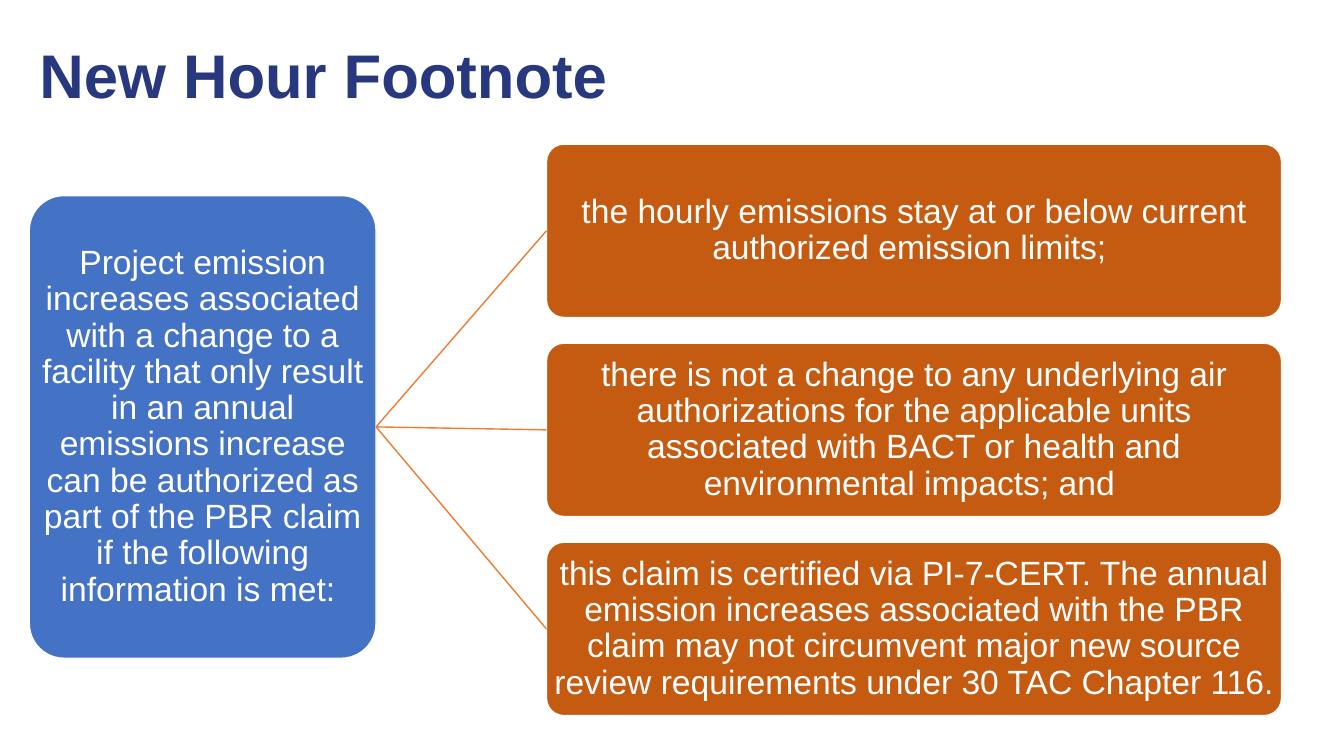
import pptx
import pptx.util
from pptx.dml.color import RGBColor
from pptx.enum.shapes import MSO_CONNECTOR, MSO_SHAPE
from pptx.enum.text import MSO_ANCHOR, MSO_AUTO_SIZE, PP_ALIGN
from pptx.oxml.ns import qn
from lxml import etree

WIDTH, HEIGHT = pptx.util.Inches(13.33), pptx.util.Inches(7.5)
LEFT = 2.18  # left margin, percent of the slide width
CONDITION_TOP, CONDITION_PITCH = 19.07, 26.33  # percent of the slide height

CLAIM = ("Project emission increases associated with a change to a facility that "
         "only result in an annual emissions increase can be authorized as part of "
         "the PBR claim if the following information is met: ")
CONDITIONS = [
    "the hourly emissions stay at or below current authorized emission limits; ",
    "there is not a change to any underlying air authorizations for the applicable "
    "units associated with BACT or health and environmental impacts; and ",
    "this claim is certified via PI-7-CERT. The annual emission increases associated "
    "with the PBR claim may not circumvent major new source review requirements "
    "under 30 TAC Chapter 116. ",
]


def across(percent):
    return round(WIDTH * percent / 100)


def down(percent):
    return round(HEIGHT * percent / 100)


def color(hex_string):
    return RGBColor.from_string(hex_string)


def format_paragraph(p, size, hex_string, align, bold=False):
    p.alignment = align
    p.line_spacing = 0.9
    p.font.name = "Arial"
    p.font.size = pptx.util.Pt(size)
    p.font.bold = bold
    p.font.color.rgb = color(hex_string)


def set_title(s, text):
    title = s.shapes.title
    title.left, title.top = across(LEFT), down(5.33)
    title.width, title.height = across(93.25), down(26.67)
    tf = title.text_frame
    tf.text = text
    tf.vertical_anchor = MSO_ANCHOR.TOP
    tf.auto_size = MSO_AUTO_SIZE.NONE
    format_paragraph(tf.paragraphs[0], 44, "27387E", PP_ALIGN.LEFT, bold=True)


def add_box(s, left, top, width, height, fill, text):
    """Add a rounded box; its place and size are percents of the slide."""
    sp = s.shapes.add_shape(MSO_SHAPE.ROUNDED_RECTANGLE, across(left), down(top),
                            across(width), down(height))
    sp.adjustments[0] = 0.1
    sp.shadow.inherit = False
    sp.fill.solid()
    sp.fill.fore_color.rgb = color(fill)
    sp.line.color.rgb = color("FFFFFF")
    sp.line.width = pptx.util.Pt(1)
    tf = sp.text_frame
    tf.word_wrap = True
    tf.vertical_anchor = MSO_ANCHOR.MIDDLE
    tf.margin_left = tf.margin_right = pptx.util.Inches(0.02)
    tf.margin_top = tf.margin_bottom = pptx.util.Inches(0.02)
    tf.text = text
    format_paragraph(tf.paragraphs[0], 24, "FFFFFF", PP_ALIGN.CENTER)
    return sp


def link(s, source, target):
    """Join the right side of one box to the left side of another."""
    line = s.shapes.add_connector(MSO_CONNECTOR.STRAIGHT, 0, 0, 0, 0)
    line.begin_connect(source, 3)
    line.end_connect(target, 1)
    line.line.color.rgb = color("ED7D31")
    line.line.width = pptx.util.Pt(1)
    etree.SubElement(line._element.spPr, qn("a:effectLst"))


def main():
    prs = pptx.Presentation()
    prs.slide_width, prs.slide_height = WIDTH, HEIGHT
    s = prs.slides.add_slide(prs.slide_layouts[5])
    set_title(s, "New Hour Footnote")
    claim = add_box(s, LEFT, 25.87, 25.8, 61.2, "4472C4", CLAIM)
    for row, text in enumerate(CONDITIONS):
        top = CONDITION_TOP + row * CONDITION_PITCH
        condition = add_box(s, 40.66, top, 54.69, 22.93, "C55A11", text)
        link(s, claim, condition)
    prs.save("out.pptx")


if __name__ == "__main__":
    main()
